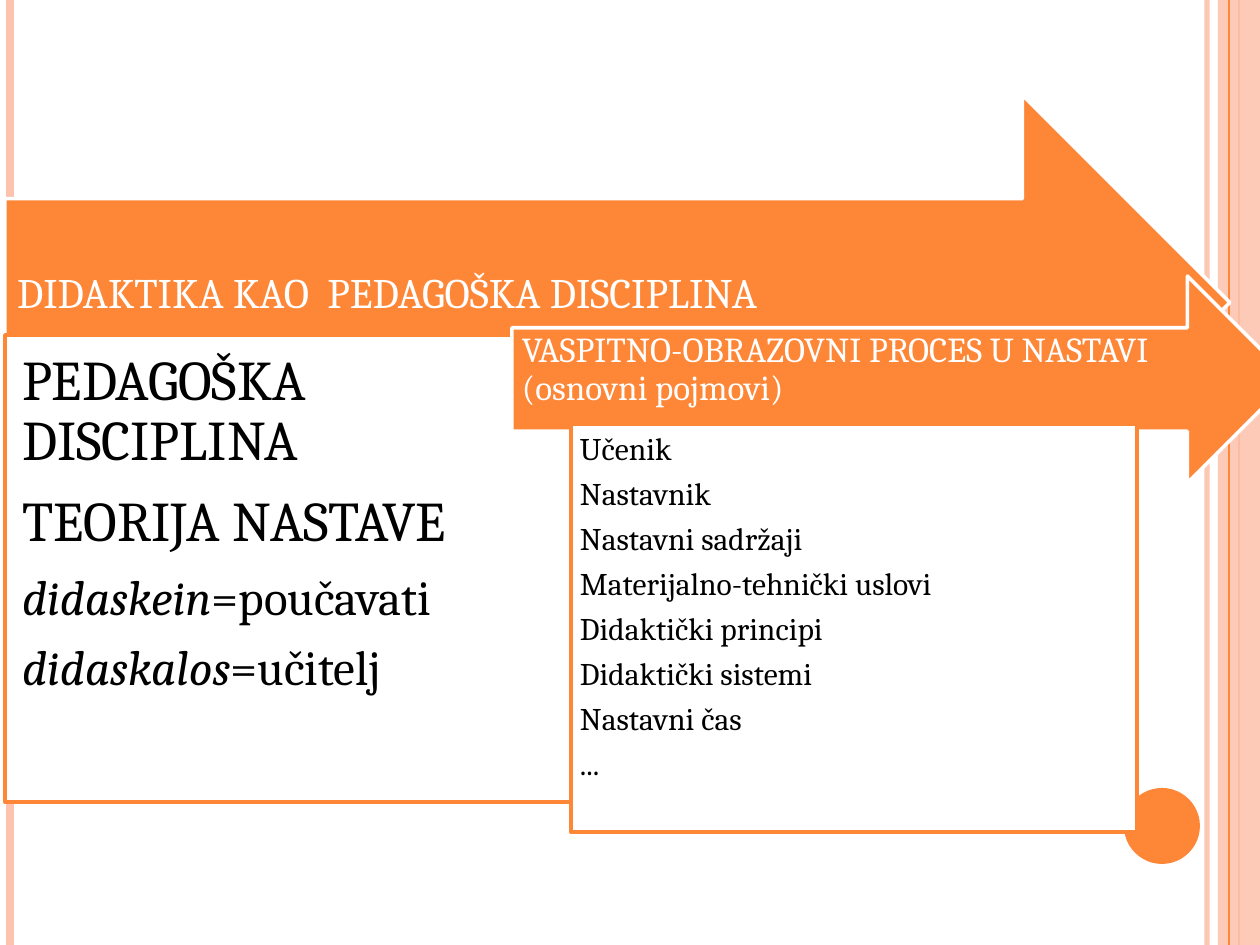
import pptx
import pptx.util
import pptx.dml.color
import pptx.enum.shapes
import pptx.enum.text
import pptx.oxml.ns
import pptx.oxml.xmlchemy

PX = 914400 / 126
SLIDE_W, SLIDE_H = 1260, 945
FONT = "Cambria"
COLORS = {
    "accent": "FE8637",
    "pale": "FEC3AE",
    "white": "FFFFFF",
    "black": "000000",
}
SHAPES = pptx.enum.shapes.MSO_SHAPE


def emu(px):
    return pptx.util.Emu(round(px * PX))


def rgb(name):
    return pptx.dml.color.RGBColor.from_string(COLORS[name])


def append_element(parent, tag):
    el = pptx.oxml.xmlchemy.OxmlElement(tag)
    parent.append(el)
    return el


def set_alpha(el, percent):
    color = el.find(".//" + pptx.oxml.ns.qn("a:srgbClr"))
    append_element(color, "a:alpha").set("val", str(percent * 1000))


def place(sp, box):
    sp.left, sp.top, sp.width, sp.height = map(emu, box)


def paint(sp, fill, line=None):
    sp.fill.solid()
    sp.fill.fore_color.rgb = rgb(fill)
    if line:
        sp.line.color.rgb = rgb(line)
        sp.line.width = pptx.util.Pt(2)
    else:
        sp.line.fill.background()


def add_shape(s, kind, box, fill, line=None):
    sp = s.shapes.add_shape(kind, *map(emu, box))
    sp.shadow.inherit = False
    paint(sp, fill, line)
    return sp


def add_rule(s, x, width, color):
    c = s.shapes.add_connector(
        pptx.enum.shapes.MSO_CONNECTOR.STRAIGHT, emu(x), 0, emu(x), emu(SLIDE_H))
    c.line.color.rgb = rgb(color)
    c.line.width = pptx.util.Pt(width)
    append_element(c._element.spPr, "a:effectLst")
    return c


def setup_frame(tf, insets, anchor):
    tf.word_wrap = True
    tf.auto_size = pptx.enum.text.MSO_AUTO_SIZE.NONE
    tf.vertical_anchor = anchor
    tf.margin_left, tf.margin_top, tf.margin_right, tf.margin_bottom = map(emu, insets)


def write_paragraph(p, text, size, color, italic_start=""):
    p.alignment = pptx.enum.text.PP_ALIGN.LEFT
    p.line_spacing = 0.9
    p.space_before = pptx.util.Pt(0)
    p.space_after = pptx.util.Pt(round(size * 0.35, 1))
    pPr = p._p.get_or_add_pPr()
    pPr.set("marL", "0")
    pPr.set("indent", "0")
    append_element(pPr, "a:buNone")
    for part, italic in ((italic_start, True), (text, False)):
        if part:
            r = p.add_run()
            r.text = part
            r.font.name = FONT
            r.font.size = pptx.util.Pt(size)
            r.font.italic = italic
            r.font.color.rgb = rgb(color)


def draw_background(s):
    set_alpha(add_rule(s, 1207, 3, "pale")._element, 93)
    add_rule(s, 10, 4.5, "pale")
    add_rule(s, 1239, 1.5, "accent")
    band = add_shape(s, SHAPES.RECTANGLE, (1218, 0, SLIDE_W - 1218, SLIDE_H), "pale")
    set_alpha(band._element, 87)
    add_rule(s, 1229, 0.75, "accent")
    add_shape(s, SHAPES.OVAL, (1124, 788, 76, 76), "accent")


def draw_arrow(s, box, text, size, inset, title=None):
    x, y, w, h = box
    add_shape(s, SHAPES.RIGHT_ARROW, box, "accent", "white")
    sp = title or s.shapes.add_textbox(0, 0, 0, 0)
    s.shapes._spTree.append(sp._element)
    place(sp, (x, y + h / 4, w - h / 4, h / 2))
    tf = sp.text_frame
    setup_frame(tf, (inset, inset, 35, 28), pptx.enum.text.MSO_ANCHOR.MIDDLE)
    write_paragraph(tf.paragraphs[0], text, size, "white")


def draw_panel(s, box, body, inset, items):
    s.shapes._spTree.append(body._element)
    place(body, box)
    paint(body, "white", "accent")
    tf = body.text_frame
    setup_frame(tf, (inset,) * 4, pptx.enum.text.MSO_ANCHOR.TOP)
    for i, (italic_start, text, size) in enumerate(items):
        p = tf.add_paragraph() if i else tf.paragraphs[0]
        write_paragraph(p, text, size, "black", italic_start=italic_start)


def main():
    prs = pptx.Presentation()
    prs.slide_width, prs.slide_height = emu(SLIDE_W), emu(SLIDE_H)
    s = prs.slides.add_slide(prs.slide_layouts.get_by_name("Two Content"))
    title, discipline, concepts = s.placeholders

    draw_background(s)
    draw_arrow(s, (5, 95, 1225, 415), "DIDAKTIKA KAO  PEDAGOŠKA DISCIPLINA",
               24, 12, title=title)
    draw_panel(s, (5, 335, 566, 467), discipline, 17, [
        ("", "PEDAGOŠKA DISCIPLINA", 32),
        ("", "TEORIJA NASTAVE", 32),
        ("didaskein", "=poučavati", 28),
        ("didaskalos", "=učitelj", 28),
    ])
    draw_arrow(s, (512, 276, 779, 207),
               "VASPITNO-OBRAZOVNI PROCES U NASTAVI (osnovni pojmovi)", 20, 10)
    concept_names = [
        "Učenik", "Nastavnik", "Nastavni sadržaji", "Materijalno-tehnički uslovi",
        "Didaktički principi", "Didaktički sistemi", "Nastavni čas", "...",
    ]
    draw_panel(s, (571, 424, 566, 408), concepts, 9,
               [("", name, 18) for name in concept_names])
    prs.save("out.pptx")


if __name__ == "__main__":
    main()
